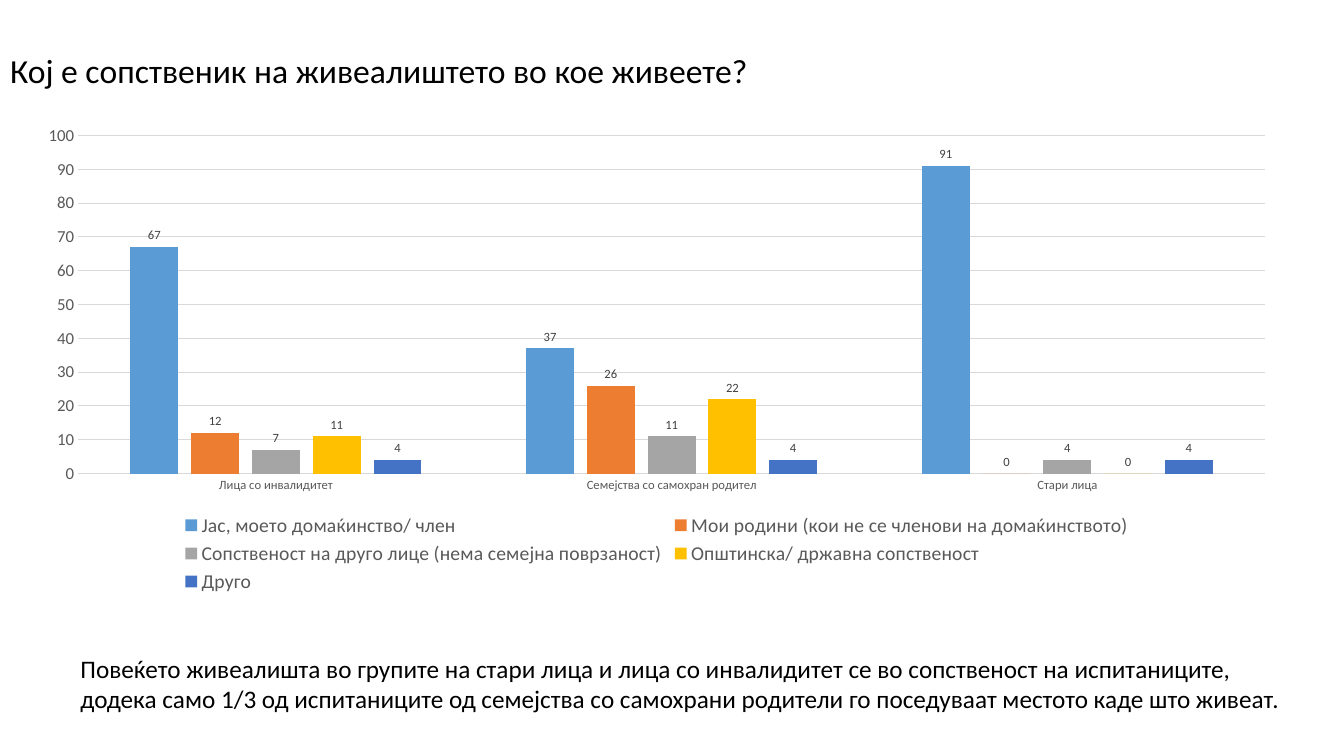
from pptx import Presentation
from pptx.chart.data import CategoryChartData
from pptx.dml.color import RGBColor
from pptx.enum.chart import (XL_CHART_TYPE, XL_LABEL_POSITION,
                             XL_LEGEND_POSITION, XL_TICK_MARK)
from pptx.enum.text import MSO_ANCHOR, MSO_AUTO_SIZE, PP_ALIGN
from pptx.util import Inches, Pt

QUESTION = "Кој е сопственик на живеалиштето во кое живеете?"
GROUPS = ["Лица со инвалидитет", "Семејства со самохран родител", "Стари лица"]
BLACK = RGBColor(0x00, 0x00, 0x00)
DARK_GREY = RGBColor(0x40, 0x40, 0x40)
GREY = RGBColor(0x59, 0x59, 0x59)
PALE_GREY = RGBColor(0xD9, 0xD9, 0xD9)
BLUE = RGBColor(0x5B, 0x9B, 0xD5)
ORANGE = RGBColor(0xED, 0x7D, 0x31)
SILVER = RGBColor(0xA5, 0xA5, 0xA5)
YELLOW = RGBColor(0xFF, 0xC0, 0x00)
INDIGO = RGBColor(0x44, 0x72, 0xC4)
OWNERS = [
    ("Јас, моето домаќинство/ член", (67, 37, 91), BLUE),
    ("Мои родини (кои не се членови на домаќинството)", (12, 26, 0), ORANGE),
    ("Сопственост на друго лице (нема семејна поврзаност)", (7, 11, 4), SILVER),
    ("Општинска/ државна сопственост", (11, 22, 0), YELLOW),
    ("Друго", (4, 4, 4), INDIGO),
]
FINDING = [
    "Повеќето живеалишта во групите на стари лица и лица со инвалидитет се во сопственост на испитаниците, ",
    "додека само 1/3 од испитаниците од семејства со самохрани родители го поседуваат местото каде што живеат.",
]
FONT = "Calibri"


def style(font, size, color):
    font.name = FONT
    font.size = Pt(size)
    font.color.rgb = color


def add_run(paragraph, text, size):
    run = paragraph.add_run()
    run.text = text
    style(run.font, size, BLACK)


def draw_line(line):
    line.color.rgb = PALE_GREY
    line.width = Pt(0.75)


def add_question(slide):
    title = slide.shapes.title
    title.left, title.top = Inches(0), Inches(0)
    title.width, title.height = Inches(11.5), Inches(1.45)
    frame = title.text_frame
    frame.auto_size = MSO_AUTO_SIZE.NONE
    frame.vertical_anchor = MSO_ANCHOR.MIDDLE
    paragraph = frame.paragraphs[0]
    paragraph.alignment = PP_ALIGN.LEFT
    paragraph.line_spacing = 0.9
    add_run(paragraph, QUESTION, 24)


def add_owner_chart(slide):
    answers = CategoryChartData(number_format="0")
    answers.categories = GROUPS
    for owner, shares, _ in OWNERS:
        answers.add_series(owner, shares)
    chart = slide.shapes.add_chart(
        XL_CHART_TYPE.COLUMN_CLUSTERED, Inches(0.23), Inches(1.15),
        Inches(12.57), Inches(4.78), answers).chart
    style(chart.font, 10, BLACK)
    chart.has_title = False
    chart.has_legend = True
    chart.legend.position = XL_LEGEND_POSITION.BOTTOM
    chart.legend.include_in_layout = False
    style(chart.legend.font, 14, GREY)

    for axis, size in ((chart.category_axis, 9), (chart.value_axis, 12)):
        axis.major_tick_mark = axis.minor_tick_mark = XL_TICK_MARK.NONE
        style(axis.tick_labels.font, size, GREY)
    draw_line(chart.category_axis.format.line)
    percent = chart.value_axis
    percent.minimum_scale, percent.maximum_scale = 0, 100
    percent.major_unit = 10
    percent.format.line.fill.background()
    draw_line(percent.major_gridlines.format.line)
    percent.tick_labels.number_format = "0"
    percent.tick_labels.number_format_is_linked = False

    plot = chart.plots[0]
    plot.gap_width, plot.overlap = 219, -27
    plot.vary_by_categories = False
    for series, (_, _, color) in zip(plot.series, OWNERS):
        series.format.fill.solid()
        series.format.fill.fore_color.rgb = color
        labels = series.data_labels
        labels.show_value = True
        labels.position = XL_LABEL_POSITION.OUTSIDE_END
        labels.number_format = "0"
        labels.number_format_is_linked = False
        style(labels.font, 9, DARK_GREY)


def add_finding(slide):
    frame = slide.shapes.add_textbox(
        Inches(0.7), Inches(6.43), Inches(12.2), Inches(0.71)).text_frame
    frame.word_wrap = False
    frame.auto_size = MSO_AUTO_SIZE.SHAPE_TO_FIT_TEXT
    paragraph = frame.paragraphs[0]
    first, second = FINDING
    add_run(paragraph, first, 18)
    paragraph.add_line_break()
    add_run(paragraph, second, 18)


def main():
    deck = Presentation()
    deck.slide_width, deck.slide_height = Inches(13.33), Inches(7.5)
    slide = deck.slides.add_slide(deck.slide_layouts.get_by_name("Title Only"))
    add_question(slide)
    add_owner_chart(slide)
    add_finding(slide)
    deck.save("out.pptx")


if __name__ == "__main__":
    main()
